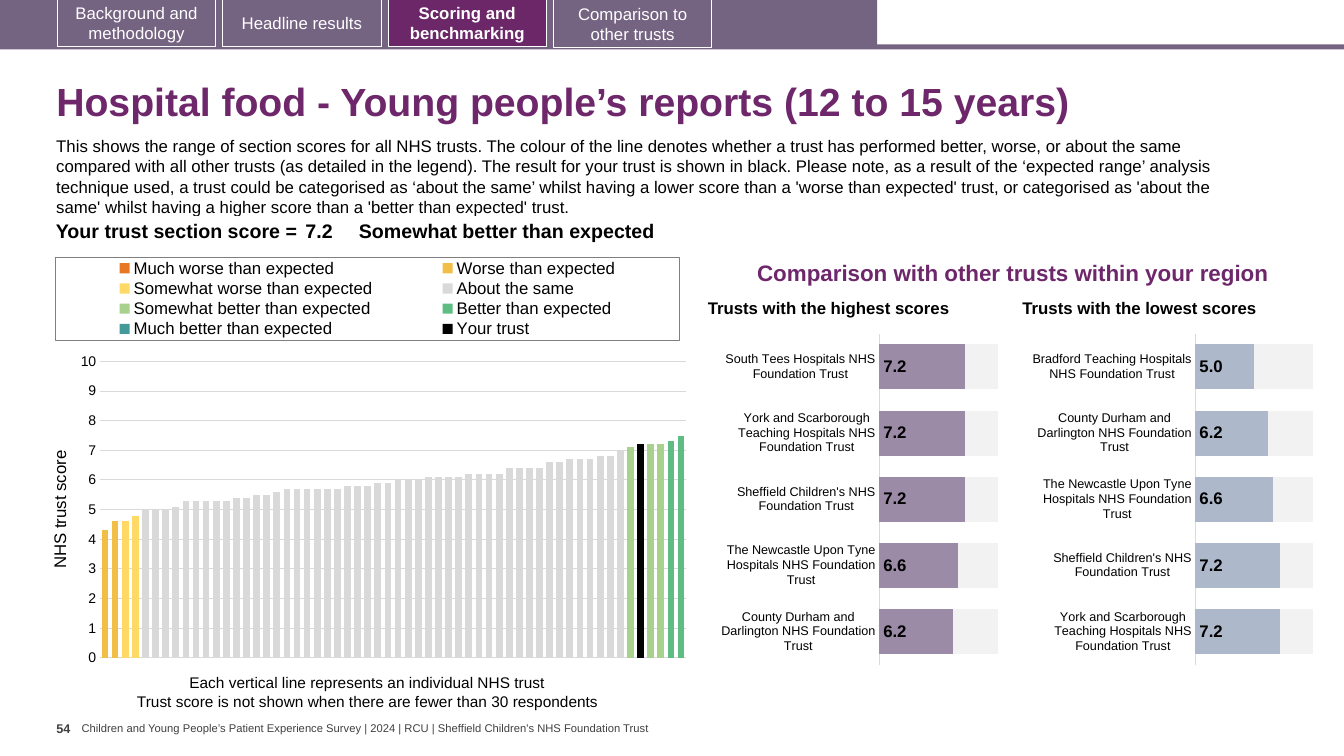
from copy import deepcopy
from lxml.etree import SubElement
from pptx import Presentation
from pptx.chart.axis import ValueAxis
from pptx.chart.data import CategoryChartData
from pptx.dml.color import RGBColor
from pptx.enum.chart import (XL_CHART_TYPE, XL_LABEL_POSITION, XL_LEGEND_POSITION,
                             XL_TICK_LABEL_POSITION, XL_TICK_MARK)
from pptx.enum.shapes import MSO_SHAPE
from pptx.enum.text import MSO_ANCHOR, PP_ALIGN
from pptx.oxml import parse_xml
from pptx.oxml.ns import nsdecls, qn
from pptx.util import Inches, Pt

BLACK = RGBColor(0x00, 0x00, 0x00)
WHITE = RGBColor(0xFF, 0xFF, 0xFF)
PURPLE = RGBColor(0x6D, 0x27, 0x6A)
BANNER = RGBColor(0x75, 0x63, 0x82)
ACTIVE_TAB = RGBColor(0x6B, 0x27, 0x68)
FOOTER_GREY = RGBColor(0x40, 0x40, 0x40)
BORDER_GREY = RGBColor(0x7F, 0x7F, 0x7F)
GRID_GREY = RGBColor(0xD9, 0xD9, 0xD9)
REMAINDER_GREY = RGBColor(0xF2, 0xF2, 0xF2)
HIGH_MAUVE = RGBColor(0x9C, 0x8B, 0xA7)
LOW_BLUE = RGBColor(0xAD, 0xB9, 0xCA)

FONT = "Arial"
TRUST_COUNT = 58
INTRO = (
    "This shows the range of section scores for all NHS trusts. The colour of the line denotes "
    "whether a trust has performed better, worse, or about the same compared with all other trusts "
    "(as detailed in the legend). The result for your trust is shown in black. Please note, as a "
    "result of the ‘expected range’ analysis technique used, a trust could be categorised as ‘about "
    "the same’ whilst having a lower score than a 'worse than expected' trust, or categorised as "
    "'about the same' whilst having a higher score than a 'better than expected' trust."
)
ABOUT_THE_SAME = [
    5, 5, 5, 5.1, 5.3, 5.3, 5.3, 5.3, 5.3, 5.4, 5.4, 5.5, 5.5, 5.6, 5.7, 5.7,
    5.7, 5.7, 5.7, 5.7, 5.8, 5.8, 5.8, 5.9, 5.9, 6, 6, 6, 6.1, 6.1, 6.1, 6.1,
    6.2, 6.2, 6.2, 6.2, 6.4, 6.4, 6.4, 6.4, 6.6, 6.6, 6.7, 6.7, 6.7, 6.8, 6.8, 7,
]
# Band name, colour, number of trusts before the band, scores
SCORE_BANDS = [
    ("Much worse than expected", RGBColor(0xE8, 0x77, 0x22), 0, []),
    ("Worse than expected", RGBColor(0xF1, 0xBE, 0x48), 0, [4.3, 4.6]),
    ("Somewhat worse than expected", RGBColor(0xFF, 0xD9, 0x66), 2, [4.6, 4.8]),
    ("About the same", GRID_GREY, 4, ABOUT_THE_SAME),
    ("Somewhat better than expected", RGBColor(0xA9, 0xD1, 0x8E), 52, [7.1, 7.2, 7.2, 7.2]),
    ("Better than expected", RGBColor(0x5F, 0xBD, 0x83), 56, [7.3, 7.5]),
    ("Much better than expected", RGBColor(0x41, 0x99, 0x99), 58, []),
    ("Your trust", BLACK, 53, [7.2]),
]
SOUTH_TEES, YORK, SHEFFIELD, NEWCASTLE, DURHAM, BRADFORD = [
    f"{name} NHS Foundation Trust" for name in (
        "South Tees Hospitals", "York and Scarborough Teaching Hospitals", "Sheffield Children's",
        "The Newcastle Upon Tyne Hospitals", "County Durham and Darlington",
        "Bradford Teaching Hospitals")]
HIGHEST = {SOUTH_TEES: 7.2, YORK: 7.2, SHEFFIELD: 7.2, NEWCASTLE: 6.6, DURHAM: 6.2}
LOWEST = {BRADFORD: 5.0, DURHAM: 6.2, NEWCASTLE: 6.6, SHEFFIELD: 7.2, YORK: 7.2}


def inches(box):
    return [Inches(length) for length in box]


def style_font(font, size, color=BLACK, bold=False):
    font.name, font.size, font.bold = FONT, Pt(size), bold
    font.color.rgb = color


def fill_frame(frame, text, size, color=BLACK, bold=False, align=None, spacing=None):
    frame.text = text
    para = frame.paragraphs[0]
    para.alignment, para.line_spacing = align, spacing
    style_font(para.runs[0].font, size, color, bold)


def add_text(slide, box, text, size, color=BLACK, bold=False, anchor=MSO_ANCHOR.TOP,
             inset=(0.1, 0.05), wrap=True, spacing=None):
    frame = slide.shapes.add_textbox(*inches(box)).text_frame
    frame.word_wrap, frame.vertical_anchor = wrap, anchor
    frame.margin_left = frame.margin_right = Inches(inset[0])
    frame.margin_top = frame.margin_bottom = Inches(inset[1])
    fill_frame(frame, text, size, color, bold, spacing=spacing)


def add_block(slide, box, color):
    block = slide.shapes.add_shape(MSO_SHAPE.RECTANGLE, *inches(box))
    block.shadow.inherit = False
    block.fill.solid()
    block.fill.fore_color.rgb = color
    block.line.fill.background()
    return block


def add_navigation(slide, box):
    left, top, width, height = box
    add_block(slide, (left, top + height - 0.05, width, 0.05), BANNER)
    add_block(slide, (left, top, 8.7, height - 0.02), BANNER)
    tabs = [("Background and methodology", -0.01), ("Headline results", -0.01),
            ("Scoring and benchmarking", -0.01), ("Comparison to other trusts", 0)]
    for column, (label, offset) in enumerate(tabs):
        active = label == "Scoring and benchmarking"
        tab = add_block(slide, (left + 0.57 + 1.64 * column, top + offset, 1.57, 0.47),
                        ACTIVE_TAB if active else BANNER)
        tab.line.color.rgb, tab.line.width = WHITE, Pt(0.75)
        tab.text_frame.vertical_anchor = MSO_ANCHOR.MIDDLE
        tab.text_frame.word_wrap = True
        fill_frame(tab.text_frame, label, 12, WHITE, active, PP_ALIGN.CENTER)


def add_score_line(slide, box):
    table = slide.shapes.add_table(1, 3, *inches(box)).table
    table.first_row = table.horz_banding = False
    columns = [("Your trust section score =", 2.63, 0.04, PP_ALIGN.RIGHT),
               ("7.2", 0.57, 0.04, None),
               ("Somewhat better than expected", box[2] - 3.2, 0, None)]
    for index, (text, width, inset, align) in enumerate(columns):
        table.columns[index].width = Inches(width)
        cell = table.cell(0, index)
        cell.fill.background()
        cell.margin_left = cell.margin_right = Inches(inset)
        cell.margin_top = cell.margin_bottom = Inches(0.04)
        fill_frame(cell.text_frame, text, 14, bold=True, align=align)


def set_layout(parent, index, shares, inner=False):
    """Fix a chart part at shares (x, y, w, h) of the chart's size."""
    for old in parent.findall(qn("c:layout")):
        parent.remove(old)
    layout = parse_xml(f"<c:layout {nsdecls('c')}><c:manualLayout/></c:layout>")
    settings = [("layoutTarget", "inner")] if inner else []
    settings += [("xMode", "edge"), ("yMode", "edge"), *zip("xywh", shares)]
    for name, value in settings:
        SubElement(layout[0], qn(f"c:{name}")).set("val", str(value))
    parent.insert(index, layout)


def add_bars(slide, box, kind, data, colors, gap, plot_shares):
    chart = slide.shapes.add_chart(kind, *inches(box), data).chart
    style_font(chart.font, 10)
    chart.has_title = chart.has_legend = False
    plot = chart.plots[0]
    plot.gap_width, plot.overlap, plot.vary_by_categories = gap, 100, False
    for series, color in zip(plot.series, colors):
        series.invert_if_negative = False
        series.format.fill.solid()
        series.format.fill.fore_color.rgb = color
    chart.value_axis.minimum_scale, chart.value_axis.maximum_scale = 0, 10
    set_layout(plot._element.getparent(), 0, plot_shares, inner=True)
    return chart


def move_last_series_to_right_axis(chart):
    bars = chart.plots[0]._element
    right_bars = deepcopy(bars)
    bars.remove(bars.findall(qn("c:ser"))[-1])
    for series in right_bars.findall(qn("c:ser"))[:-1]:
        right_bars.remove(series)
    bars.addnext(right_bars)
    category, value = [deepcopy(axis._element) for axis in (chart.category_axis, chart.value_axis)]
    chart.value_axis._element.addnext(value)
    value.addnext(category)
    for element, own, other in ((category, "5001", "5002"), (value, "5002", "5001")):
        element.find(qn("c:axId")).set("val", own)
        element.find(qn("c:crossAx")).set("val", other)
    for reference, number in zip(right_bars.findall(qn("c:axId")), ("5001", "5002")):
        reference.set("val", number)
    value.find(qn("c:axPos")).set("val", "r")
    value.find(qn("c:crosses")).set("val", "max")
    axis = ValueAxis(value)
    axis.has_major_gridlines = axis.has_title = False
    axis.major_tick_mark = XL_TICK_MARK.OUTSIDE
    axis.tick_label_position = XL_TICK_LABEL_POSITION.NONE


def add_range_chart(slide, box):
    data = CategoryChartData()
    data.categories = [str(number + 1) for number in range(TRUST_COUNT)]
    for name, _, start, scores in SCORE_BANDS:
        after = TRUST_COUNT - start - len(scores)
        data.add_series(name, [None] * start + scores + [None] * after)
    chart = add_bars(slide, box, XL_CHART_TYPE.COLUMN_CLUSTERED, data,
                     [band[1] for band in SCORE_BANDS], 50, (0.083, 0.265, 0.907, 0.699))
    chart.category_axis.visible = False
    axis = chart.value_axis
    axis.major_unit, axis.major_tick_mark = 1, XL_TICK_MARK.NONE
    axis.format.line.fill.background()
    axis.major_gridlines.format.line.color.rgb = GRID_GREY
    axis.major_gridlines.format.line.width = Pt(0.75)
    style_font(axis.tick_labels.font, 10)
    fill_frame(axis.axis_title.text_frame, "NHS trust score", 12)
    move_last_series_to_right_axis(chart)

    chart.has_legend = True
    legend = chart.legend
    legend.position, legend.include_in_layout = XL_LEGEND_POSITION.TOP, False
    style_font(legend.font, 12)
    set_layout(legend._element, 1, (0.014, 0.019, 0.966, 0.196))
    legend._element.find(qn("c:overlay")).addnext(parse_xml(
        f"<c:spPr {nsdecls('c', 'a')}><a:ln w='9525'><a:solidFill>"
        f"<a:srgbClr val='{BORDER_GREY}'/></a:solidFill></a:ln></c:spPr>"))


def add_region_chart(slide, box, heading, trusts, color, indent, plot_left, plot_width):
    left, top, width, height = box
    add_text(slide, (left, top, width, 0.23), heading, 12, bold=True,
             anchor=MSO_ANCHOR.BOTTOM, inset=(0, 0), spacing=0.9)
    data = CategoryChartData(number_format="0.0")
    data.categories = list(trusts)
    data.add_series("Series 1", trusts.values())
    data.add_series("Series 2", [round(10 - score, 1) for score in trusts.values()])
    chart = add_bars(slide, (left + indent, top + 0.31, width - indent, height - 0.31),
                     XL_CHART_TYPE.BAR_STACKED, data, [color, REMAINDER_GREY], 47,
                     (plot_left, 0.021, plot_width, 0.957))
    chart.value_axis.visible = chart.value_axis.has_major_gridlines = False
    axis = chart.category_axis
    axis.reverse_order, axis.major_tick_mark = True, XL_TICK_MARK.NONE
    axis.format.line.color.rgb, axis.format.line.width = GRID_GREY, Pt(0.75)
    style_font(axis.tick_labels.font, 9)
    labels = chart.plots[0].series[0].data_labels
    labels.show_value, labels.position = True, XL_LABEL_POSITION.INSIDE_BASE
    labels.number_format, labels.number_format_is_linked = "0.0", False
    style_font(labels.font, 12, bold=True)


def add_footer(slide, left, top):
    add_text(slide, (left, top, 0.25, 0.4), "54", 9, FOOTER_GREY, True, inset=(0, 0.05), wrap=False)
    add_text(slide, (left + 0.25, top + 0.06, 5.72, 0.13),
             f"Children and Young People’s Patient Experience Survey | 2024 | RCU | {SHEFFIELD}",
             8, FOOTER_GREY, anchor=MSO_ANCHOR.MIDDLE, inset=(0, 0), wrap=False)


def main():
    deck = Presentation()
    deck.slide_width, deck.slide_height = Inches(13.33), Inches(7.5)
    slide = deck.slides.add_slide(deck.slide_layouts[6])
    add_navigation(slide, (0, 0, 13.33, 0.49))
    add_text(slide, (0.46, 0.67, 12.49, 0.72),
             "Hospital food - Young people’s reports (12 to 15 years)", 28, PURPLE, True,
             MSO_ANCHOR.MIDDLE, spacing=0.9)
    add_text(slide, (0.46, 1.3, 12.13, 0.91), INTRO, 12)
    add_score_line(slide, (0.36, 2.15, 11.69, 0.22))
    add_range_chart(slide, (0.46, 2.47, 6.41, 4.21))
    add_text(slide, (1.78, 6.63, 3.75, 0.29),
             "Each vertical line represents an individual NHS trust", 11, wrap=False)
    add_text(slide, (1.26, 6.82, 4.81, 0.29),
             "Trust score is not shown when there are fewer than 30 respondents", 11, wrap=False)
    add_text(slide, (7.51, 2.33, 5.47, 0.51), "Comparison with other trusts within your region",
             16, PURPLE, True, MSO_ANCHOR.BOTTOM, (0, 0), spacing=0.9)
    add_region_chart(slide, (7.02, 2.93, 2.94, 3.74), "Trusts with the highest scores",
                     HIGHEST, HIGH_MAUVE, 0.08, 0.567, 0.413)
    add_region_chart(slide, (10.14, 2.93, 2.94, 3.74), "Trusts with the lowest scores",
                     LOWEST, LOW_BLUE, 0.05, 0.577, 0.402)
    add_footer(slide, 0.56, 7.1)
    deck.save("out.pptx")


if __name__ == "__main__":
    main()
